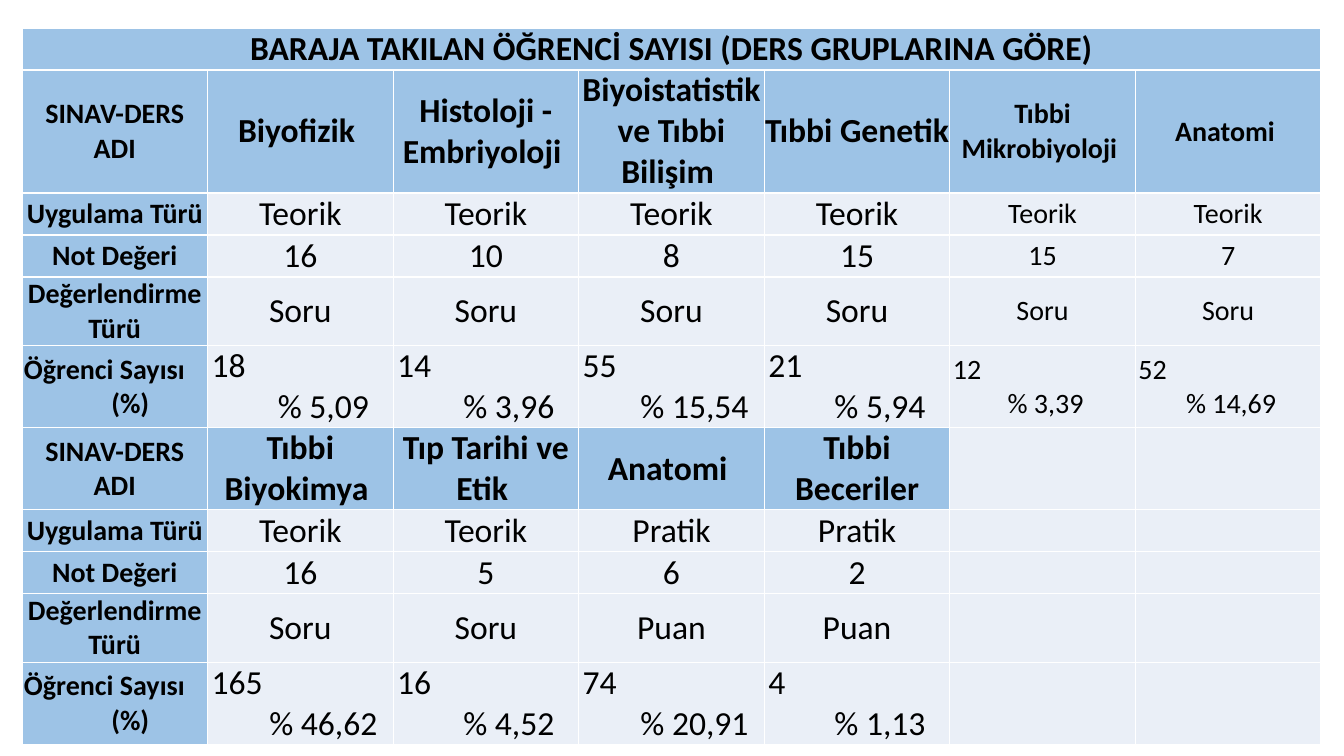
from lxml import etree
from pptx import Presentation
from pptx import util as u
from pptx.dml.color import RGBColor
from pptx.enum import text
from pptx.oxml import ns

LABELS = ["SINAV-DERS ADI", "Uygulama Türü", "Not Değeri", "Değerlendirme Türü",
          ("Öğrenci Sayısı", "(%)")]
FIRST_EXAMS = [
    ("Biyofizik ", "Teorik", "16", "Soru", ("18", "% 5,09")),
    ("Histoloji - Embriyoloji ", "Teorik", "10", "Soru", ("14", "% 3,96")),
    ("Biyoistatistik ve Tıbbi Bilişim ", "Teorik", "8", "Soru", ("55", "% 15,54")),
    ("Tıbbi Genetik ", "Teorik", "15", "Soru", ("21", "% 5,94")),
    ("Tıbbi Mikrobiyoloji ", "Teorik", "15", "Soru", ("12", "% 3,39")),
    ("Anatomi ", "Teorik", "7", "Soru", ("52", "% 14,69")),
]
SECOND_EXAMS = [
    ("Tıbbi Biyokimya ", "Teorik", "16", "Soru", ("165", "% 46,62")),
    ("Tıp Tarihi ve Etik ", "Teorik", "5", "Soru", ("16", "% 4,52")),
    ("Anatomi ", "Pratik", "6", "Puan", ("74", "% 20,91")),
    ("Tıbbi Beceriler", "Pratik", "2", "Puan", ("4", "% 1,13")),
]
TITLE = "BARAJA TAKILAN ÖĞRENCİ SAYISI (DERS GRUPLARINA GÖRE)"
COLUMNS = 7
COLUMN_WIDTH = 1299 / COLUMNS
SMALL_COLUMNS = (0, 5, 6)
VALUE_HEIGHTS = [42, 42, 64, 77]
ROW_HEIGHTS = [42, 115, *VALUE_HEIGHTS, 77, *VALUE_HEIGHTS]


class SlideBuilder:
    """Draws styled elements on the current slide, measured in px."""

    scale = 914400 / 100.8
    colours = {"header": "9DC3E6", "body": "EAEFF7", "line": "FFFFFF", "text": "000000"}
    cell_format = {"margin_left": 0, "margin_top": 0, "margin_right": 0, "margin_bottom": 0,
                   "vertical_anchor": text.MSO_ANCHOR.MIDDLE}

    def __init__(self, presentation):
        presentation.slide_width = self.px(1344)
        presentation.slide_height = self.px(756)
        self.slide = presentation.slides.add_slide(presentation.slide_layouts[6])

    def px(self, length):
        return u.Emu(round(length * self.scale))

    def colour(self, name):
        return RGBColor.from_string(self.colours[name])

    def table(self, left, top, column_width, heights):
        shape = self.slide.shapes.add_table(
            len(heights), COLUMNS, self.px(left), self.px(top),
            self.px(column_width * COLUMNS), self.px(sum(heights)))
        table = shape.table
        for name in ("first_row", "horz_banding"):
            setattr(table, name, False)
        for column in table.columns:
            column.width = self.px(column_width)
        for row, height in zip(table.rows, heights):
            row.height = self.px(height)
        return table

    def borders(self, cell):
        properties = cell._tc.get_or_add_tcPr()
        for index, side in enumerate(("lnL", "lnR", "lnT", "lnB")):
            line = etree.Element(ns.qn(f"a:{side}"), w=str(u.Pt(1)))
            fill = etree.SubElement(line, ns.qn("a:solidFill"))
            etree.SubElement(fill, ns.qn("a:srgbClr"), val=self.colours["line"])
            properties.insert(index, line)

    def paragraph(self, paragraph, content, size, bold, align, indent):
        paragraph.alignment = align
        if indent:
            paragraph._p.get_or_add_pPr().set("marL", str(self.px(indent)))
        run = paragraph.add_run()
        run.text = content
        font_format = {"name": "Calibri", "size": u.Pt(size), "bold": bold}
        for name, value in font_format.items():
            setattr(run.font, name, value)
        run.font.color.rgb = self.colour("text")

    def cell(self, cell, content, fill, size, bold, indents=(0, 0)):
        for name, value in self.cell_format.items():
            setattr(cell, name, value)
        cell.fill.solid()
        cell.fill.fore_color.rgb = self.colour(fill)
        self.borders(cell)
        frame = cell.text_frame
        if isinstance(content, tuple):
            count, percent = content
            self.paragraph(frame.paragraphs[0], count, size, bold, text.PP_ALIGN.LEFT, indents[0])
            self.paragraph(frame.add_paragraph(), percent, size, bold,
                           text.PP_ALIGN.CENTER, indents[1])
        elif content:
            self.paragraph(frame.paragraphs[0], content, size, bold, text.PP_ALIGN.CENTER, 0)


def fill_exams(builder, table, first_row, exams):
    blanks = [("",) * len(LABELS)] * (COLUMNS - 1 - len(exams))
    for column, entries in enumerate([LABELS, *exams, *blanks]):
        size = 20 if column in SMALL_COLUMNS else 24
        indents = (2, 31) if column == 0 else (3, 6) if size == 20 else (4, 46)
        for offset, content in enumerate(entries):
            header = column == 0 or (offset == 0 and bool(content))
            builder.cell(table.cell(first_row + offset, column), content,
                         "header" if header else "body", size, header, indents)


def main():
    presentation = Presentation()
    builder = SlideBuilder(presentation)
    table = builder.table(22, 28, COLUMN_WIDTH, ROW_HEIGHTS)
    table.cell(0, 0).merge(table.cell(0, COLUMNS - 1))
    builder.cell(table.cell(0, 0), TITLE, "header", 24, True)
    fill_exams(builder, table, 1, FIRST_EXAMS)
    fill_exams(builder, table, 1 + len(LABELS), SECOND_EXAMS)
    presentation.save("out.pptx")


if __name__ == "__main__":
    main()
